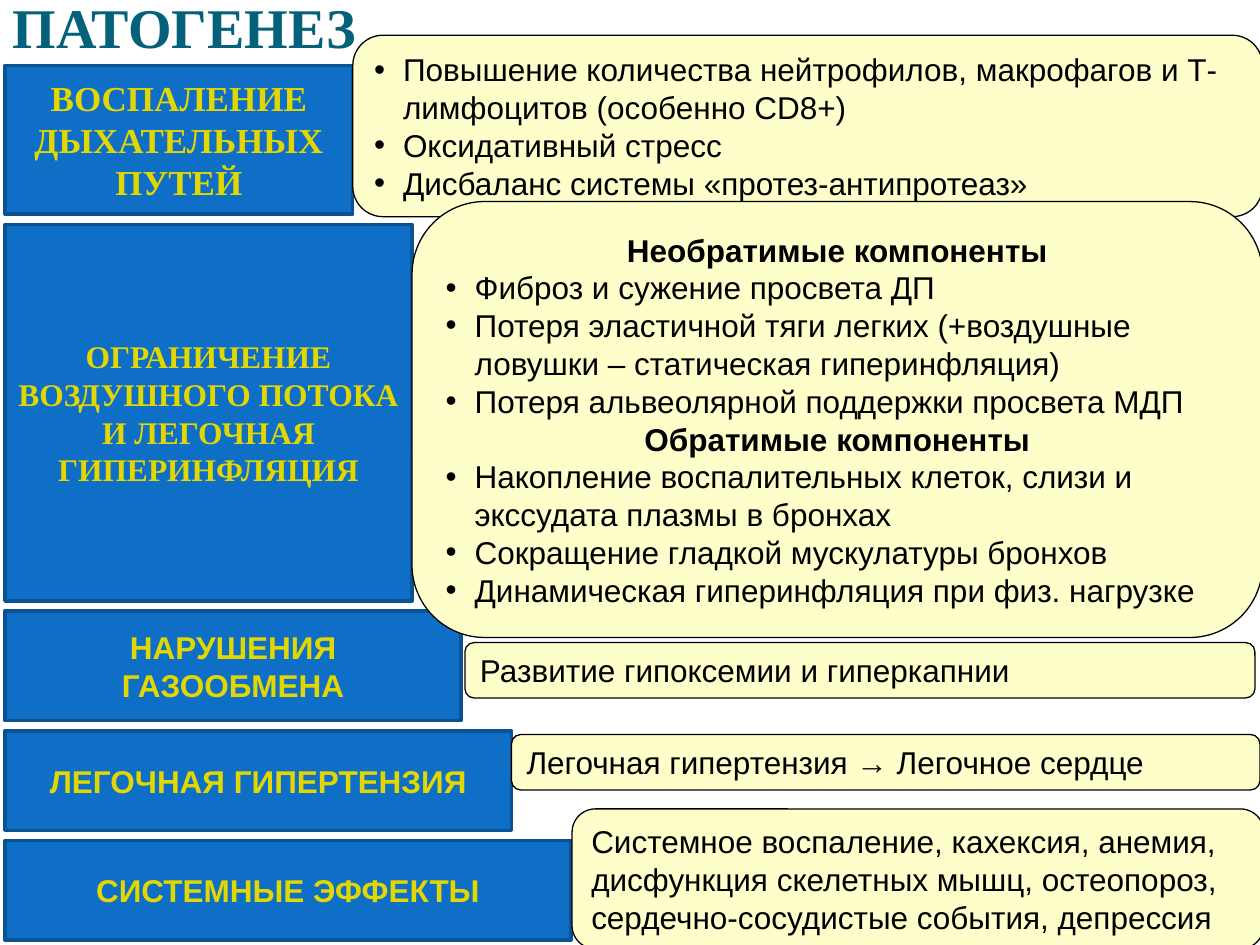
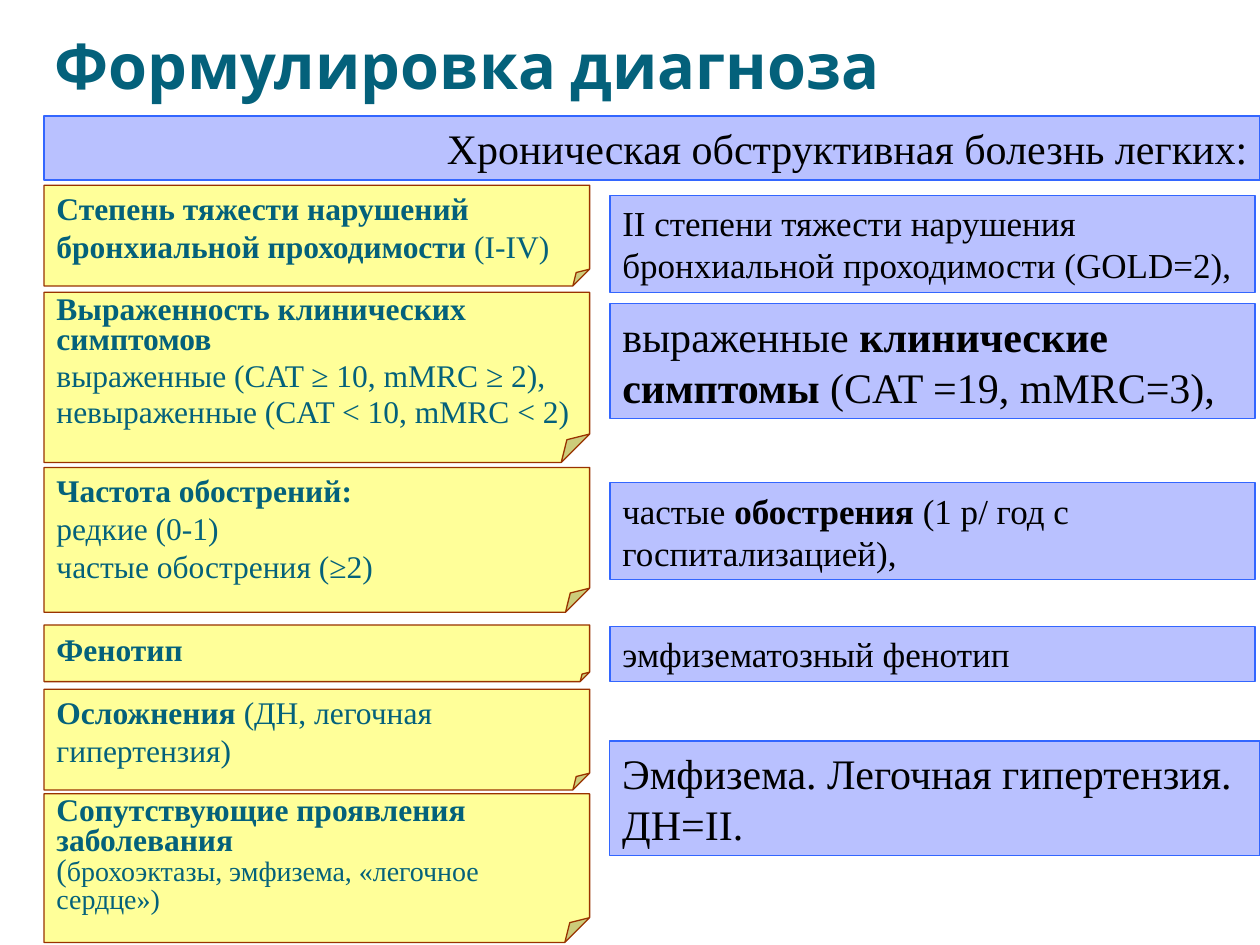
from lxml import etree
from pptx import Presentation
from pptx import util as u
from pptx.dml.color import RGBColor
from pptx.enum import shapes, text
from pptx.oxml import ns

WIDTH, HEIGHT = 10, 7.5
SERIF, SANS = "Times New Roman", "Arial"
COLOURS = {
    "teal": "04617B", "blue": "0F6FC6", "navy": "0B5292", "gold": "E2D700",
    "cream": "FEFECA", "black": "000000", "lilac": "B9C1FF",
    "royal": "3366FF", "lemon": "FFFF99", "rust": "993300",
}
KINDS = {
    "stage": ("RECTANGLE", "blue", "navy", 2, "gold"),
    "detail": ("ROUNDED_RECTANGLE", "cream", "black", 0.75, "black"),
    "criterion": ("FOLDED_CORNER", "lemon", "rust", 0.75, "teal"),
    "finding": ("RECTANGLE", "lilac", "royal", 0.75, "black"),
}
ROLES = {
    "plain": {}, "item": {"bullet": "•"},
    "centre": {"align": "CENTER"}, "right": {"align": "RIGHT"},
    "tight": {"lines": 0.8}, "spaced": {"lines": 0.8, "before": 3.6},
}
BULLET_INDENT = 0.23

PATHOGENESIS = ("ПАТОГЕНЕЗ", (0, -0.11, WIDTH, 0.63), 32, SERIF)
STAGE_LEFT, STAGE_TOP, STAGE_GAP = 0.04, 0.52, 0.08
STAGES = [
    (2.76, 1.18, 20, SERIF, "ВОСПАЛЕНИЕ ДЫХАТЕЛЬНЫХ ПУТЕЙ"),
    (3.23, 2.99, 18, SERIF, "ОГРАНИЧЕНИЕ ВОЗДУШНОГО ПОТОКА И ЛЕГОЧНАЯ ГИПЕРИНФЛЯЦИЯ"),
    (3.62, 0.87, 18, SANS, "НАРУШЕНИЯ ГАЗООБМЕНА"),
    (4.02, 0.79, 18, SANS, "ЛЕГОЧНАЯ ГИПЕРТЕНЗИЯ"),
    (4.49, 0.79, 18, SANS, "СИСТЕМНЫЕ ЭФФЕКТЫ"),
]
DETAILS = [
    ((2.8, 0.28, 7.22, 1.44), [
        ("item", ("Повышение количества нейтрофилов, макрофагов и Т-лимфоцитов (особенно CD8+)",)),
        ("item", ("Оксидативный стресс",)),
        ("item", ("Дисбаланс системы «протез-антипротеаз»",)),
    ]),
    ((3.27, 1.6, 6.75, 3.46), [
        ("centre", ("Необратимые компоненты", True)),
        ("item", ("Фиброз и сужение просвета ДП",)),
        ("item", ("Потеря эластичной тяги легких (+воздушные ловушки – статическая гиперинфляция)",)),
        ("item", ("Потеря альвеолярной поддержки просвета МДП",)),
        ("centre", ("Обратимые компоненты", True)),
        ("item", ("Накопление воспалительных клеток, слизи и экссудата плазмы в бронхах",)),
        ("item", ("Сокращение гладкой мускулатуры бронхов",)),
        ("item", ("Динамическая гиперинфляция при физ. нагрузке",)),
    ]),
    ((3.69, 5.1, 6.27, 0.44), [("plain", ("Развитие гипоксемии и гиперкапнии",))]),
    ((4.06, 5.83, 5.94, 0.44), [("plain", ("Легочная гипертензия → Легочное сердце",))]),
    ((4.54, 6.42, 5.49, 1.11), [
        ("plain", ("Системное воспаление, кахексия, анемия, дисфункция скелетных мышц, "
                   "остеопороз, сердечно-сосудистые события, депрессия",)),
    ]),
]

DIAGNOSIS = ("Формулировка диагноза", (0.33, 0.05, 9.5, 0.92), 36, "Cabin")
CRITERION_LEFT, CRITERION_WIDTH = 0.35, 4.33
FINDING_LEFT, FINDING_WIDTH = 4.84, 5.12
CRITERIA = [
    (1.47, 0.8, [("plain", ("Степень тяжести нарушений бронхиальной проходимости ", True), ("(I-IV)",))]),
    (2.32, 1.35, [
        ("spaced", ("Выраженность клинических симптомов", True)),
        ("spaced", ("выраженные (CAT ≥ 10, mMRC ≥ 2),",)),
        ("spaced", ("невыраженные (CAT < 10, mMRC < 2)",)),
    ]),
    (3.71, 1.15, [
        ("plain", ("Частота обострений:", True)),
        ("plain", ("редкие (0-1)",)),
        ("plain", ("частые обострения (≥2)",)),
    ]),
    (4.96, 0.45, [("plain", ("Фенотип", True))]),
    (5.47, 0.8, [("plain", ("Осложнения ", True), ("(ДН, легочная гипертензия)",))]),
    (6.3, 1.18, [
        ("tight", ("Сопутствующие проявления заболевания", True)),
        ("tight", ("(",), ("брохоэктазы, эмфизема, «легочное сердце»)", False, 16)),
    ]),
]
DISEASE = ((CRITERION_LEFT, 0.92, WIDTH - CRITERION_LEFT, 0.51),
           [("right", ("Хроническая обструктивная болезнь легких:",))])
FINDINGS = [
    (1.55, FINDING_WIDTH, 0.77, 20, [
        ("plain", ("II степени тяжести нарушения бронхиальной проходимости (GOLD=2),",))]),
    (2.41, FINDING_WIDTH, 0.91, 24, [
        ("plain", ("выраженные ",), ("клинические симптомы ", True), ("(CAT =19, mMRC=3),",))]),
    (3.83, FINDING_WIDTH, 0.77, 20, [
        ("plain", ("частые ",), ("обострения", True), (" (1 р/ год с госпитализацией),",))]),
    (4.97, FINDING_WIDTH, 0.44, 20, [("plain", ("эмфизематозный фенотип",))]),
    (5.88, WIDTH - FINDING_LEFT, 0.91, 24, [
        ("plain", ("Эмфизема. Легочная гипертензия. ДН=II.",))]),
]


def colour(name):
    return RGBColor.from_string(COLOURS[name])


def add_run(paragraph, words, size, font, ink, bold=False):
    run = paragraph.add_run()
    run.text = words
    run.font.size, run.font.name, run.font.bold = u.Pt(size), font, bold
    run.font.color.rgb = colour(ink)


def format_paragraph(paragraph, align="LEFT", lines=None, before=0, bullet=None):
    paragraph.alignment = getattr(text.PP_ALIGN, align)
    paragraph.space_before = u.Pt(before)
    if lines:
        paragraph.line_spacing = lines
    if bullet:
        properties = paragraph._p.get_or_add_pPr()
        indent = u.Inches(BULLET_INDENT)
        properties.set("marL", str(indent))
        properties.set("indent", str(-indent))
        etree.SubElement(properties, ns.qn("a:buFont"), typeface=SANS)
        etree.SubElement(properties, ns.qn("a:buChar"), char=bullet)


def prepare_frame(frame):
    frame.word_wrap = True
    frame.auto_size = text.MSO_AUTO_SIZE.NONE
    frame.vertical_anchor = text.MSO_ANCHOR.MIDDLE


def add_titled_slide(deck, words, place, size, font):
    slide = deck.slides.add_slide(deck.slide_layouts[5])
    title = slide.shapes.title
    title.left, title.top, title.width, title.height = map(u.Inches, place)
    prepare_frame(title.text_frame)
    heading = title.text_frame.paragraphs[0]
    format_paragraph(heading)
    add_run(heading, words, size, font, "teal", True)
    return slide


def add_box(slide, kind, place, paragraphs, size=18, font=SERIF):
    outline, fill, edge, weight, ink = KINDS[kind]
    box = slide.shapes.add_shape(getattr(shapes.MSO_SHAPE, outline), *map(u.Inches, place))
    box.shadow.inherit = False
    box.fill.solid()
    box.fill.fore_color.rgb = colour(fill)
    box.line.color.rgb = colour(edge)
    box.line.width = u.Pt(weight)
    frame = box.text_frame
    prepare_frame(frame)
    for index, (role, *runs) in enumerate(paragraphs):
        paragraph = frame.add_paragraph() if index else frame.paragraphs[0]
        format_paragraph(paragraph, **ROLES[role])
        for words, *options in runs:
            bold, run_size = (options + [False, size][len(options):])
            add_run(paragraph, words, run_size, font, ink, bold)


def build_pathogenesis(deck):
    slide = add_titled_slide(deck, *PATHOGENESIS)
    top = STAGE_TOP
    for width, height, size, font, words in STAGES:
        add_box(slide, "stage", (STAGE_LEFT, top, width, height),
                [("centre", (words, True))], size, font)
        top += height + STAGE_GAP
    for place, paragraphs in DETAILS:
        add_box(slide, "detail", place, paragraphs, font=SANS)


def build_diagnosis(deck):
    slide = add_titled_slide(deck, *DIAGNOSIS)
    add_box(slide, "finding", *DISEASE, size=24)
    for top, width, height, size, paragraphs in FINDINGS:
        add_box(slide, "finding", (FINDING_LEFT, top, width, height), paragraphs, size)
    for top, height, paragraphs in CRITERIA:
        add_box(slide, "criterion", (CRITERION_LEFT, top, CRITERION_WIDTH, height), paragraphs)


def main():
    deck = Presentation()
    deck.slide_width, deck.slide_height = u.Inches(WIDTH), u.Inches(HEIGHT)
    build_pathogenesis(deck)
    build_diagnosis(deck)
    deck.save("out.pptx")


if __name__ == "__main__":
    main()
